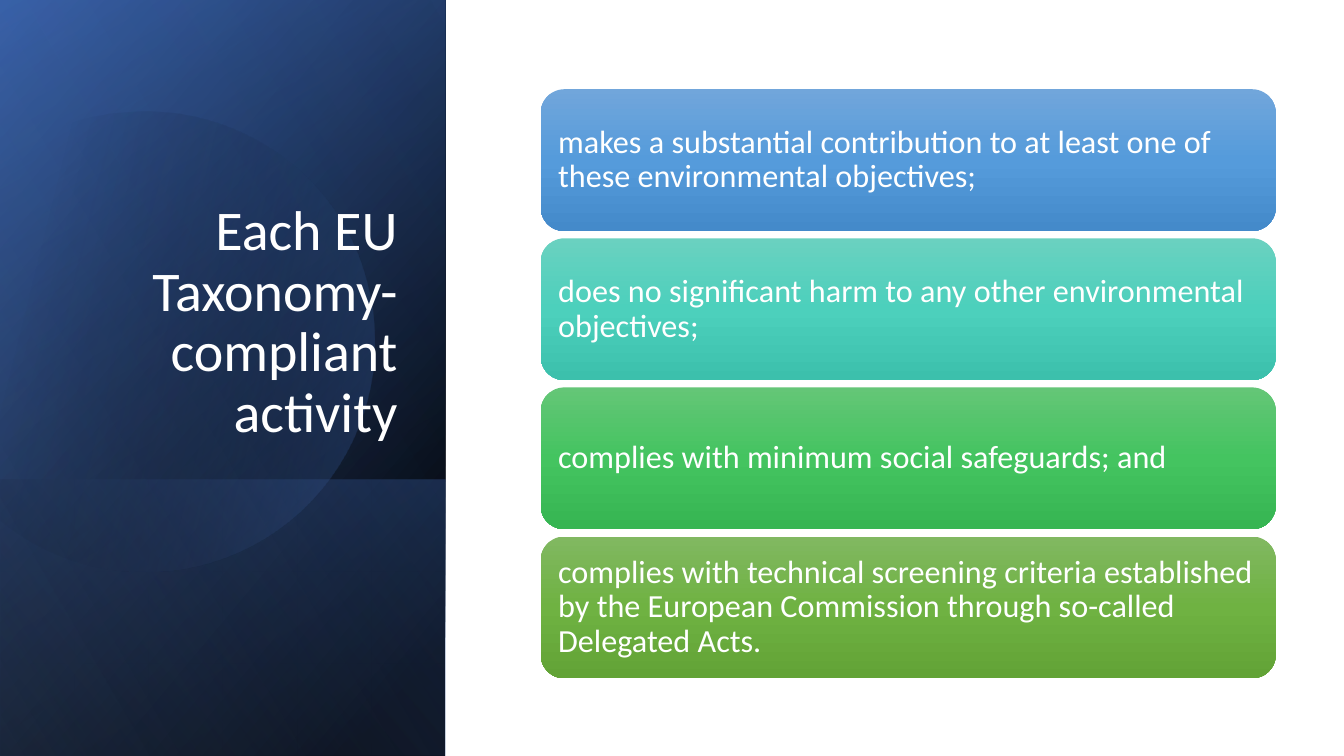
from dataclasses import dataclass
from math import cos, radians, sin

from pptx import Presentation
from pptx.dml.color import RGBColor
from pptx.enum.shapes import MSO_SHAPE
from pptx.enum.text import MSO_ANCHOR, PP_ALIGN
from pptx.oxml import parse_xml
from pptx.oxml.ns import nsdecls, qn
from pptx.util import Emu, Pt

RECTANGLE, ROUNDED = MSO_SHAPE.RECTANGLE, MSO_SHAPE.ROUNDED_RECTANGLE
LEFT, RIGHT = PP_ALIGN.LEFT, PP_ALIGN.RIGHT
MIDDLE, BOTTOM = MSO_ANCHOR.MIDDLE, MSO_ANCHOR.BOTTOM
FONT, WHITE = "Calibri", "FFFFFF"
EMU_PER_PX = 9525
CURVE_STEPS = 24


@dataclass(frozen=True)
class Stop:
    position: int
    color: str
    opacity: int = 100


@dataclass(frozen=True)
class Box:
    left: int
    top: int
    width: int
    height: int


@dataclass(frozen=True)
class Panel:
    box: Box
    stops: tuple[Stop, ...]
    angle: int


@dataclass(frozen=True)
class Card:
    text: str
    colors: tuple[str, str, str]


# Side panel layers, each turned a quarter and mirrored
SIDE = Box(-148, 148, 720, 424)
BASE_PANELS = (
    Panel(SIDE, (Stop(8, "000000"), Stop(100, "2F5597")), 50),
    Panel(SIDE, (Stop(0, "000000", 0), Stop(99, "4472C4", 46)), 30),
    Panel(Box(81, 376, 263, 424), (Stop(2, "4472C4", 29), Stop(100, "000000", 30)), 130),
)
TOP_PANEL = Panel(SIDE, (Stop(0, "000000", 0), Stop(99, "8FAADC", 11)), 120)

# Cut circle: a start point, then lines (one point) and Bézier curves (three)
CIRCLE_START = (143, 106)
CIRCLE_SEGMENTS = (
    ((236, 108), (322, 170), (348, 264)),
    ((382, 381), (315, 502), (199, 536)),
    ((126, 557), (51, 539), (-3, 493)),
    ((-14, 483),),
    ((-14, 168),),
    ((0, 155),),
    ((22, 136), (48, 123), (77, 114)),
    ((99, 108), (121, 106), (143, 106)),
)
CIRCLE_CENTER = (152, 321)
CIRCLE_ROTATION = -16.1
CIRCLE_STOPS = (Stop(29, "000000", 0), Stop(100, "4472C4", 43))

TITLE_BOX = Box(61, 177, 327, 251)
FIRST_CARD = Box(515, 85, 700, 135)
CARD_PITCH = 142
CARD_MARGIN = 10
CARDS = (
    Card("makes a substantial contribution to at least one of these environmental objectives;",
         ("71A6DB", "559BDB", "448ACA")),
    Card("does no significant harm to any other environmental objectives;",
         ("6AD1C0", "4CD0BC", "3CC0AC")),
    Card("complies with minimum social safeguards; and",
         ("64C677", "44C460", "36B552")),
    Card("complies with technical screening criteria established by the European Commission "
         "through so-called Delegated Acts.",
         ("81B861", "6FB242", "62A336")),
)


def px(value: float) -> Emu:
    return Emu(round(value * EMU_PER_PX))


def rgb(color: str) -> RGBColor:
    return RGBColor.from_string(color)


def place(box: Box) -> tuple[Emu, Emu, Emu, Emu]:
    return px(box.left), px(box.top), px(box.width), px(box.height)


def paint(shape, stops: tuple[Stop, ...], angle: int) -> None:
    """Give the shape a linear gradient, no line and no shadow."""
    shape.shadow.inherit = False
    shape.line.fill.background()
    shape.fill.background()
    stop_xml = "".join(
        f'<a:gs pos="{stop.position * 1000}"><a:srgbClr val="{stop.color}">'
        f'<a:alpha val="{stop.opacity * 1000}"/></a:srgbClr></a:gs>'
        for stop in stops
    )
    gradient = parse_xml(
        f'<a:gradFill {nsdecls("a")} rotWithShape="1"><a:gsLst>{stop_xml}</a:gsLst>'
        f'<a:lin ang="{angle * 60000}" scaled="0"/></a:gradFill>'
    )
    properties = shape._element.spPr
    properties.replace(properties.find(qn("a:noFill")), gradient)


def write(shape, text: str, size: int, alignment, anchor) -> None:
    text_frame = shape.text_frame
    text_frame.word_wrap = True
    text_frame.vertical_anchor = anchor
    text_frame.text = text
    paragraph = text_frame.paragraphs[0]
    paragraph.alignment = alignment
    paragraph.line_spacing = 0.9
    font = paragraph.runs[0].font
    font.name, font.size, font.color.rgb = FONT, Pt(size), rgb(WHITE)


def add_panel(slide, panel: Panel) -> None:
    shape = slide.shapes.add_shape(RECTANGLE, *place(panel.box))
    shape.rotation = 90
    shape._element.spPr.find(qn("a:xfrm")).set("flipH", "1")
    paint(shape, panel.stops, panel.angle)


def circle_outline() -> list[tuple[float, float]]:
    points = [CIRCLE_START]
    for segment in CIRCLE_SEGMENTS:
        if len(segment) == 1:
            points.append(segment[0])
            continue
        controls = (points[-1], *segment)
        for step in range(1, CURVE_STEPS + 1):
            t = step / CURVE_STEPS
            weights = ((1 - t) ** 3, 3 * t * (1 - t) ** 2, 3 * t * t * (1 - t), t ** 3)
            points.append(tuple(
                sum(weight * control[axis] for weight, control in zip(weights, controls))
                for axis in (0, 1)
            ))
    return points


def add_circle(slide) -> None:
    """Draw the outline turned back, so that its rotation restores it."""
    turn = radians(-CIRCLE_ROTATION)
    center_x, center_y = CIRCLE_CENTER
    points = [
        (px(center_x + (x - center_x) * cos(turn) - (y - center_y) * sin(turn)),
         px(center_y + (x - center_x) * sin(turn) + (y - center_y) * cos(turn)))
        for x, y in circle_outline()
    ]
    builder = slide.shapes.build_freeform(*points[0])
    builder.add_line_segments(points[1:], close=True)
    shape = builder.convert_to_shape()
    shape.rotation = CIRCLE_ROTATION
    paint(shape, CIRCLE_STOPS, 30)


def add_card(slide, card: Card, index: int) -> None:
    box = Box(FIRST_CARD.left, FIRST_CARD.top + index * CARD_PITCH,
              FIRST_CARD.width, FIRST_CARD.height)
    shape = slide.shapes.add_shape(ROUNDED, *place(box))
    paint(shape, tuple(Stop(50 * i, color) for i, color in enumerate(card.colors)), 90)
    write(shape, card.text, 23, LEFT, MIDDLE)
    text_frame = shape.text_frame
    text_frame.margin_left = text_frame.margin_right = px(CARD_MARGIN)
    text_frame.margin_top = text_frame.margin_bottom = px(CARD_MARGIN)


def main() -> None:
    presentation = Presentation()
    presentation.slide_width, presentation.slide_height = px(1280), px(720)
    slide = presentation.slides.add_slide(presentation.slide_layouts[6])

    # Side panel
    for panel in BASE_PANELS:
        add_panel(slide, panel)
    add_circle(slide)
    add_panel(slide, TOP_PANEL)

    # Title
    title = slide.shapes.add_textbox(*place(TITLE_BOX))
    write(title, "Each EU Taxonomy-compliant activity", 40, RIGHT, BOTTOM)

    # Criteria cards
    for index, card in enumerate(CARDS):
        add_card(slide, card, index)

    presentation.save("out.pptx")


if __name__ == "__main__":
    main()
